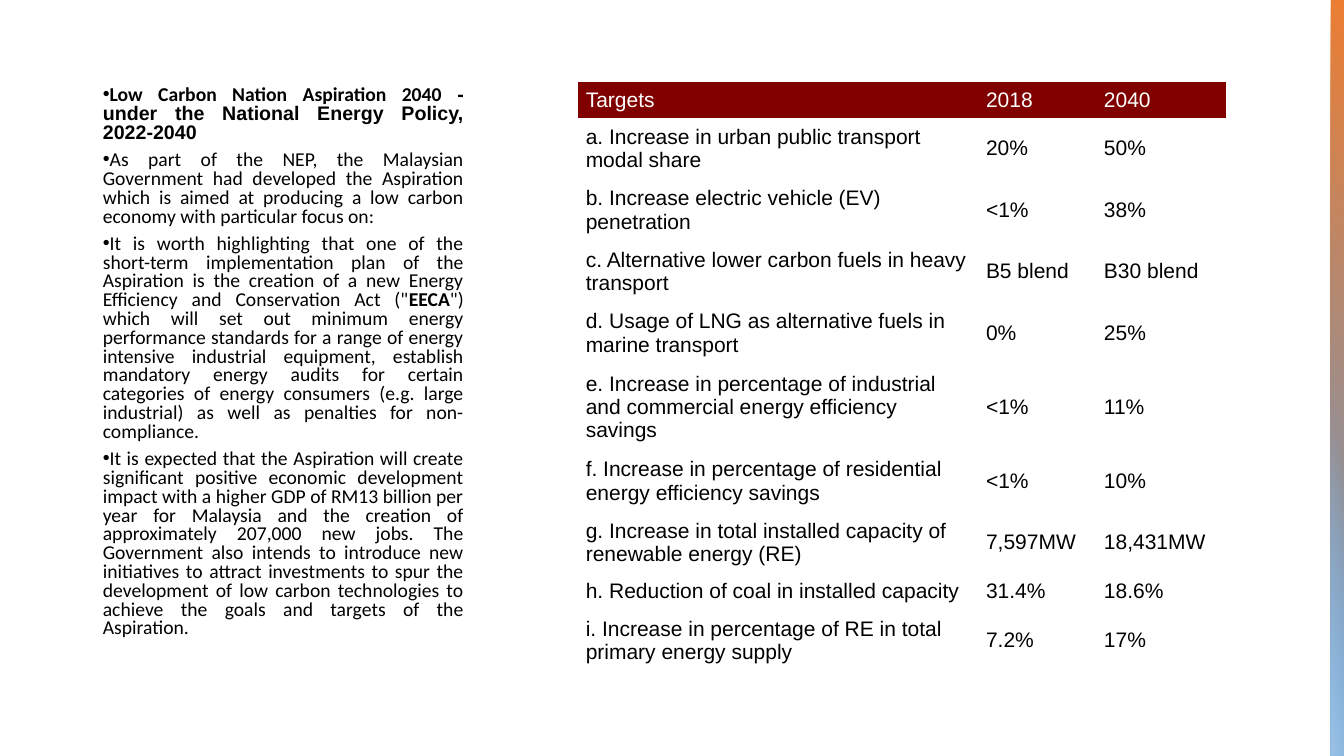
"""Build the slide on the Low Carbon Nation Aspiration 2040 and its targets."""
from lxml import etree
from pptx import Presentation
from pptx.dml.color import RGBColor
from pptx.enum.shapes import MSO_SHAPE
from pptx.enum.text import MSO_ANCHOR, MSO_AUTO_SIZE, PP_ALIGN
from pptx.oxml import parse_xml
from pptx.oxml.ns import qn
from pptx.util import Pt

RECTANGLE = MSO_SHAPE.RECTANGLE
MIDDLE, TOP = MSO_ANCHOR.MIDDLE, MSO_ANCHOR.TOP
NO_AUTOFIT = MSO_AUTO_SIZE.NONE
JUSTIFY = PP_ALIGN.JUSTIFY
DRAWING = "http://schemas.openxmlformats.org/drawingml/2006/main"
NO_STYLE_NO_GRID = "{2D5ABB26-0587-4C30-8999-92F81FD0307C}"
PX = 9144

THEME = {
    "text": RGBColor(0x00, 0x00, 0x00),
    "header_text": RGBColor(0xFF, 0xFF, 0xFF),
    "header_fill": RGBColor(0x80, 0x00, 0x00),
    "orange": "ED7D31",
    "blue": "5B9BD5",
    "light_blue": "9DC3E6",
    "body_font": "Calibri",
    "table_font": "Arial",
    "body_size": Pt(14),
    "table_size": Pt(15),
}

ASPIRATION = [
    [("Low Carbon Nation Aspiration 2040 ", True, "body_font"),
     ("- under the National Energy Policy, 2022-2040", True, "table_font")],
    [("As part of the NEP, the Malaysian Government had developed the Aspiration which is "
      "aimed at producing a low carbon economy with particular focus on:", False, "body_font")],
    [("It is worth highlighting that one of the short-term implementation plan of the "
      "Aspiration is the creation of a new Energy Efficiency and Conservation Act (\"",
      False, "body_font"),
     ("EECA", True, "body_font"),
     ("\") which will set out minimum energy performance standards for a range of energy "
      "intensive industrial equipment, establish mandatory energy audits for certain "
      "categories of energy consumers (e.g. large industrial) as well as penalties for "
      "non-compliance.", False, "body_font")],
    [("It is expected that the Aspiration will create significant positive economic "
      "development impact with a higher GDP of RM13 billion per year for Malaysia and the "
      "creation of approximately 207,000 new jobs. The Government also intends to introduce "
      "new initiatives to attract investments to spur the development of low carbon "
      "technologies to achieve the goals and targets of the Aspiration.", False, "body_font")],
]

TARGETS = [
    (36, "Targets", "2018", "2040"),
    (61, "a. Increase in urban public transport modal share", "20%", "50%"),
    (61, "b. Increase electric vehicle (EV) penetration", "<1%", "38%"),
    (61, "c. Alternative lower carbon fuels in heavy transport", "B5 blend", "B30 blend"),
    (61, "d. Usage of LNG as alternative fuels in marine transport", "0%", "25%"),
    (86, "e. Increase in percentage of industrial and commercial energy efficiency savings",
     "<1%", "11%"),
    (61, "f. Increase in percentage of residential energy efficiency savings", "<1%", "10%"),
    (61, "g. Increase in total installed capacity of renewable energy (RE)",
     "7,597MW", "18,431MW"),
    (36, "h. Reduction of coal in installed capacity", "31.4%", "18.6%"),
    (61, "i. Increase in percentage of RE in total primary energy supply", "7.2%", "17%"),
]
COLUMN_WIDTHS = (397, 117, 129)

EDGE_BANDS = [
    (0, 750, 30, [(0, "orange", 100), (100, "blue", 100)]),
    (386, 364, 10, [(19, "light_blue", 0), (100, "light_blue", 100)]),
]


def place(left, top, width, height):
    """Turn a box in px into EMU."""
    return [value * PX for value in (left, top, width, height)]


presentation = Presentation()
presentation.slide_width, presentation.slide_height = 1333 * PX, 750 * PX
slide = presentation.slides.add_slide(presentation.slide_layouts[1])
title = slide.shapes.title
title.element.getparent().remove(title.element)

body = slide.placeholders[1]
body.left, body.top, body.width, body.height = place(92, 81, 378, 555)
frame = body.text_frame
frame.word_wrap = True
frame.auto_size = NO_AUTOFIT
frame.vertical_anchor = TOP
for index, runs in enumerate(ASPIRATION):
    paragraph = frame.paragraphs[0] if index == 0 else frame.add_paragraph()
    paragraph.alignment = JUSTIFY
    paragraph.line_spacing = 0.8
    paragraph.space_before, paragraph.space_after = Pt(0), Pt(6)
    paragraph.font.size = THEME["body_size"]
    paragraph.font.color.rgb = THEME["text"]
    properties = paragraph._p.get_or_add_pPr()
    properties.set("marL", "0")
    properties.set("indent", str(-25 * PX))
    bullet = parse_xml(f'<a:buChar xmlns:a="{DRAWING}" char="•"/>')
    properties.find(qn("a:spcAft")).addnext(bullet)
    for text, bold, font in runs:
        run = paragraph.add_run()
        run.text = text
        run.font.bold = bold
        run.font.name = THEME[font]

for top, height, angle, stops in EDGE_BANDS:
    band = slide.shapes.add_shape(RECTANGLE, *place(1320, top, 13, height))
    band.shadow.inherit = False
    band.line.fill.background()
    band.fill.gradient()
    gradient = band._element.spPr.find(qn("a:gradFill"))
    stop_list = gradient.find(qn("a:gsLst"))
    for stop in list(stop_list):
        stop_list.remove(stop)
    for position, color, opacity in stops:
        stop = etree.SubElement(stop_list, qn("a:gs"), pos=str(position * 1000))
        fill_color = etree.SubElement(stop, qn("a:srgbClr"), val=THEME[color])
        etree.SubElement(fill_color, qn("a:alpha"), val=str(opacity * 1000))
    direction = gradient.find(qn("a:lin"))
    direction.set("ang", str(angle * 60000))
    direction.set("scaled", "0")
    band._element.spPr.xfrm.set("flipH", "1")

table_frame = slide.shapes.add_table(
    len(TARGETS), len(COLUMN_WIDTHS), *place(573, 81, sum(COLUMN_WIDTHS), 589))
table = table_frame.table
table.horz_banding = False
table._tbl.tblPr.find(qn("a:tableStyleId")).text = NO_STYLE_NO_GRID
for column, width in zip(table.columns, COLUMN_WIDTHS):
    column.width = width * PX
for row_index, (height, *values) in enumerate(TARGETS):
    table.rows[row_index].height = height * PX
    for column_index, value in enumerate(values):
        cell = table.cell(row_index, column_index)
        cell.text = value
        cell.vertical_anchor = MIDDLE
        cell.margin_left = cell.margin_right = 8 * PX
        cell.margin_top = cell.margin_bottom = 4 * PX
        font = cell.text_frame.paragraphs[0].font
        font.name, font.size = THEME["table_font"], THEME["table_size"]
        if row_index == 0:
            cell.fill.solid()
            cell.fill.fore_color.rgb = THEME["header_fill"]
            font.color.rgb = THEME["header_text"]
        else:
            cell.fill.background()
            font.color.rgb = THEME["text"]

presentation.save("out.pptx")
